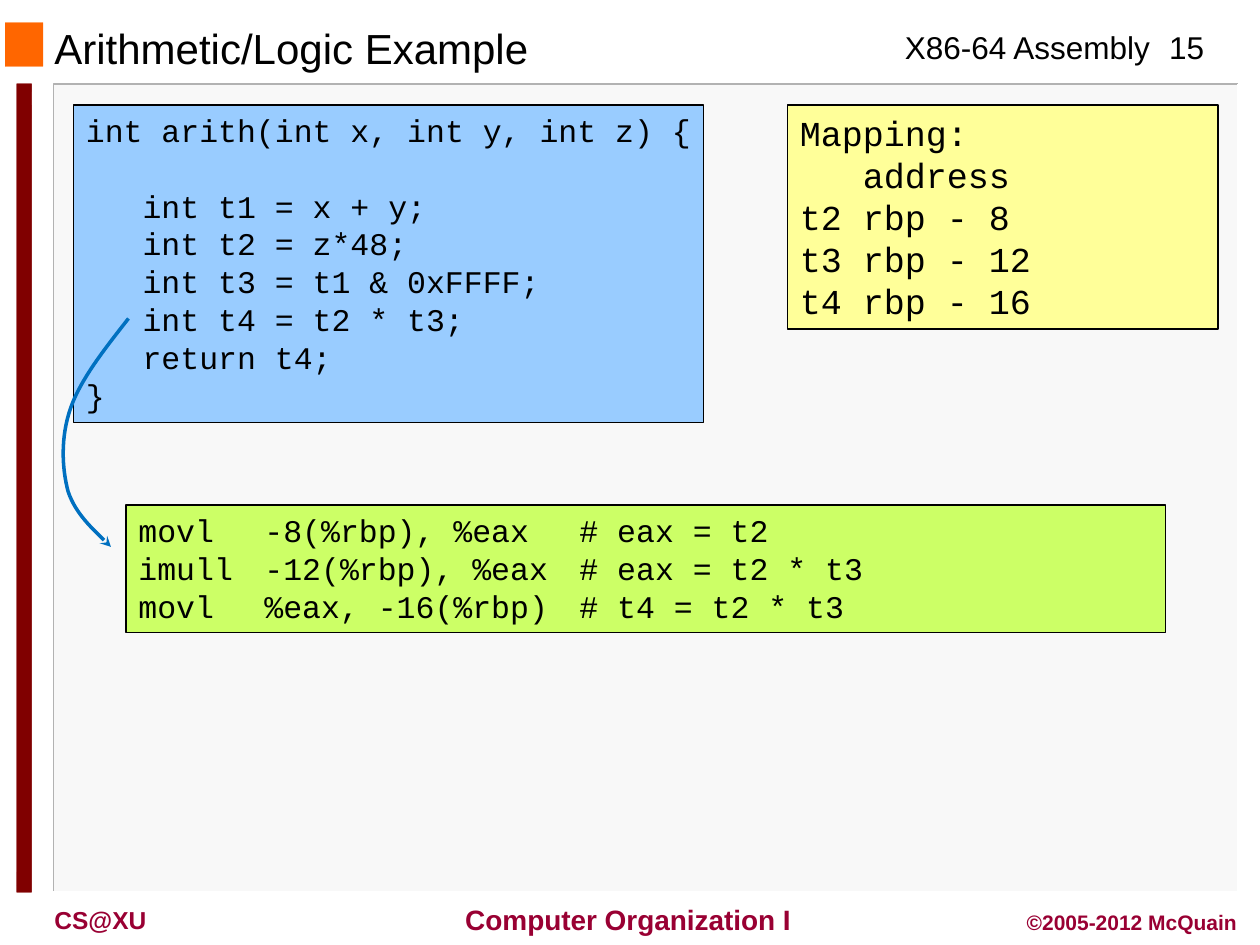
from pptx import Presentation
from pptx.dml.color import RGBColor
from pptx.enum.shapes import MSO_SHAPE
from pptx.enum.text import MSO_ANCHOR, PP_ALIGN
from pptx.oxml.ns import qn
from pptx.util import Pt
from lxml.etree import SubElement

HUES = {
    "black": "000000", "white": "FFFFFF", "panel": "F8F8F8", "edge": "B2B2B2",
    "orange": "FF6600", "maroon": "800000", "wine": "990033", "blue": "99CCFF",
    "yellow": "FFFF99", "green": "CCFF66", "arrow": "0070C0",
}


def apply(item, values):
    for name, value in values.items():
        setattr(item, name, value)


def hue(name):
    return RGBColor.from_string(HUES[name])


def paint(shape, fill=None, line=None, width=0.75):
    shape.shadow.inherit = False
    if fill:
        shape.fill.solid()
        shape.fill.fore_color.rgb = hue(fill)
    else:
        shape.fill.background()
    if line:
        shape.line.color.rgb = hue(line)
        shape.line.width = Pt(width)
    else:
        shape.line.fill.background()


def block(slide, box, **look):
    shape = slide.shapes.add_shape(MSO_SHAPE.RECTANGLE, *map(Pt, box))
    paint(shape, **look)
    return shape


def trace(slide, points, **look):
    start, *rest = [(Pt(x), Pt(y)) for x, y in points]
    pen = slide.shapes.build_freeform(*start)
    pen.add_line_segments(rest, close=False)
    shape = pen.convert_to_shape()
    paint(shape, **look)
    return shape


def bevel(slide, box, fill, edges):
    left, top, width, height = box
    right, base = left + width, top + height
    block(slide, box, fill=fill)
    for corner, look in zip([(left, top), (right, base)], edges):
        trace(slide, [(right, top), corner, (left, base)], **look)


def write(shape, rows, font, size, color="black", bold=False,
          align=PP_ALIGN.LEFT, anchor=MSO_ANCHOR.TOP, wrap=True):
    frame = shape.text_frame
    apply(frame, {"word_wrap": wrap, "vertical_anchor": anchor})
    for num, (text, indent, space, tabs) in enumerate(rows):
        para = frame.add_paragraph() if num else frame.paragraphs[0]
        apply(para, {"alignment": align, "space_before": Pt(space)})
        run = para.add_run()
        run.text = text
        apply(run.font, {"name": font, "size": Pt(size), "bold": bold})
        run.font.color.rgb = hue(color)
        props = para._p.get_or_add_pPr()
        props.set("marL", str(Pt(indent)))
        props.set("indent", "0")
        if tabs:
            stops = SubElement(props, qn("a:tabLst"))
            for stop in tabs:
                SubElement(stops, qn("a:tab"), pos=str(Pt(stop)), algn="l")


def label(slide, box, text, size, **look):
    shape = slide.shapes.add_textbox(*map(Pt, box))
    write(shape, [(text, 0, 0, ())], "Arial", size, **look)


def listing(slide, box, fill, rows, size):
    shape = block(slide, box, fill=fill, line="black")
    write(shape, rows, "Courier New", size)


def frame(slide):
    bevel(slide, (30.5, 48.2, 677, 461.5), "panel",
          [{"line": "edge", "width": 1}, {"line": "white", "width": 1}])
    bevel(slide, (3, 13, 21.6, 25), "orange", [{"fill": "orange"}] * 2)
    bevel(slide, (9.5, 47.8, 8.6, 462.2), "maroon", [{"fill": "maroon"}] * 2)


def header(slide):
    label(slide, (510, 12.5, 156, 29), "X86-64 Assembly", 18, wrap=False)
    label(slide, (654, 12.5, 48, 29), "15", 18, align=PP_ALIGN.CENTER)
    label(slide, (24, 14, 456, 27), "Arithmetic/Logic Example", 24,
          anchor=MSO_ANCHOR.MIDDLE)


def footer(slide):
    look = {"color": "wine", "bold": True}
    label(slide, (252, 512, 209.5, 26.6), " Computer Organization I", 16,
          align=PP_ALIGN.CENTER, anchor=MSO_ANCHOR.MIDDLE, wrap=False, **look)
    label(slide, (24, 513.5, 108, 24), "CS@XU", 14, **look)
    label(slide, (564, 516, 150, 21.8), "©2005-2012 McQuain", 12,
          align=PP_ALIGN.RIGHT, **look)


def source(slide, box):
    body = ["int t1 = x + y;", "int t2 = z*48;", "int t3 = t1 & 0xFFFF;",
            "int t4 = t2 * t3;", "return t4;"]
    rows = [("int arith(int x, int y, int z) {", 0, 0, ())]
    rows += [(text, 32.4, 0 if num else 21.5, ())
             for num, text in enumerate(body)]
    rows.append(("}", 0, 0, ()))
    listing(slide, box, "blue", rows, 18)


def mapping(slide, box):
    lines = ["Mapping:", "\taddress", "t2\trbp -\t8", "t3\trbp - 12",
             "t4\trbp - 16"]
    rows = [(text, 0, 0, (108.5, 193)) for text in lines]
    listing(slide, box, "yellow", rows, 20)


def machine(slide, box):
    lines = ["movl\t-8(%rbp), %eax\t# eax = t2",
             "imull\t-12(%rbp), %eax\t# eax = t2 * t3",
             "movl\t%eax, -16(%rbp)\t# t4 = t2 * t3"]
    rows = [(text, 0, 0, (72, 299)) for text in lines]
    listing(slide, box, "green", rows, 18)


def arrow(slide, points):
    shape = trace(slide, points, line="arrow", width=2)
    steps = list(shape._element.iter(qn("a:lnTo")))
    for first in range(0, len(steps), 3):
        curve = SubElement(steps[first].getparent(), qn("a:cubicBezTo"))
        for step in steps[first:first + 3]:
            curve.append(step[0])
            step.getparent().remove(step)
    SubElement(shape.line._get_or_add_ln(), qn("a:tailEnd"), type="stealth")


def main():
    deck = Presentation()
    apply(deck, {"slide_width": Pt(720), "slide_height": Pt(540)})
    slide = deck.slides.add_slide(deck.slide_layouts[6])
    frame(slide)
    header(slide)
    footer(slide)
    source(slide, (42, 60, 360, 181.5))
    mapping(slide, (450, 60, 246, 128))
    machine(slide, (72, 288.6, 594, 72.7))
    arrow(slide, [(73.4, 182), (59.8, 199.4), (46.1, 216.7), (40.3, 233.3),
                  (34.6, 249.8), (35.3, 267.1), (38.9, 280.8),
                  (43.2, 293.8), (63.4, 312.5), (63.4, 312.5)])
    deck.save("out.pptx")


if __name__ == "__main__":
    main()
